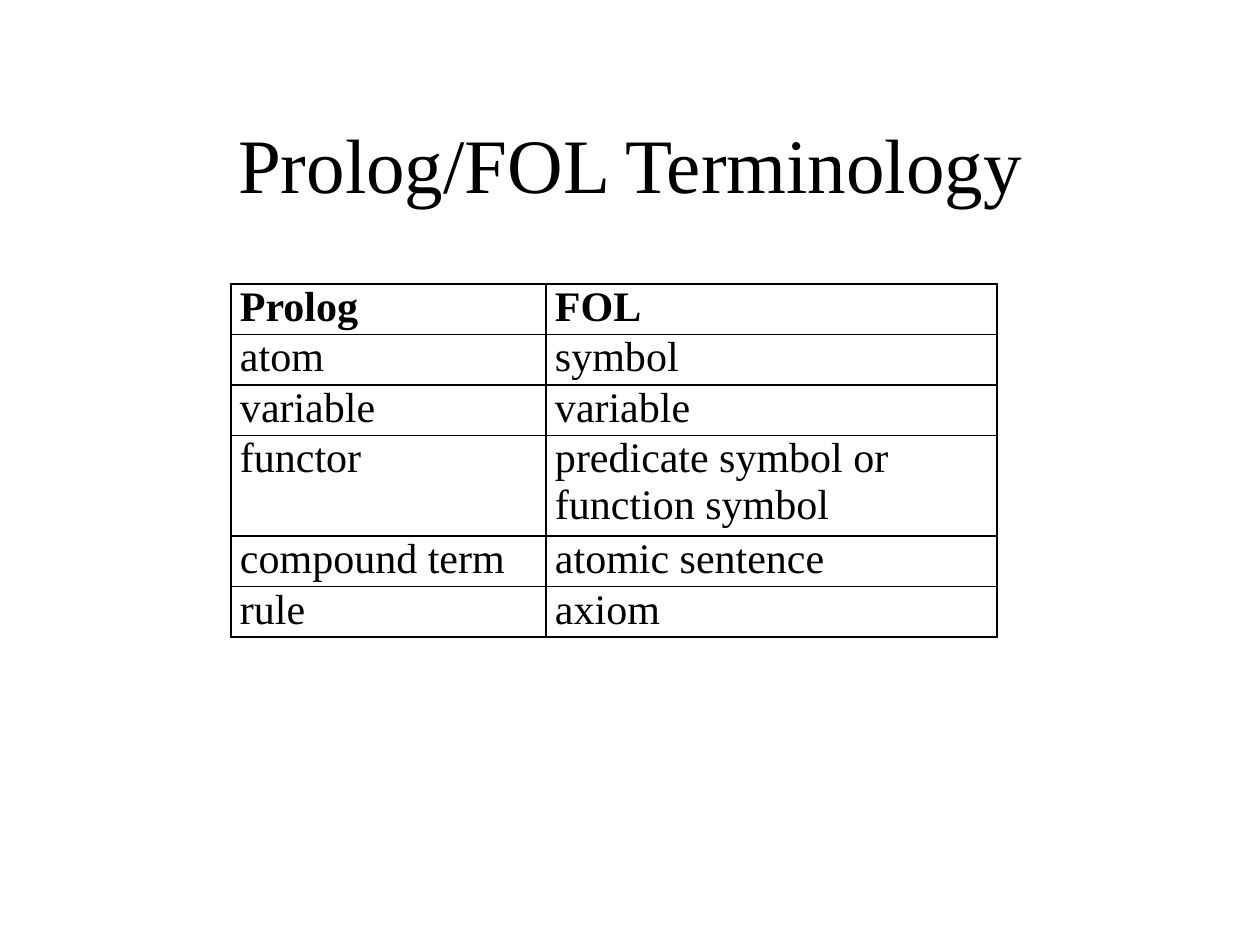
from dataclasses import dataclass

from lxml import etree
from pptx import Presentation
from pptx.dml.color import RGBColor
from pptx.enum.text import MSO_ANCHOR, PP_ALIGN
from pptx.oxml.ns import qn
from pptx.util import Emu, Pt

MIDDLE = MSO_ANCHOR.MIDDLE
CENTER = PP_ALIGN.CENTER
EMU_PER_PX = 914400 / 126


@dataclass(frozen=True)
class Theme:
    font: str = "Times New Roman"
    ink: str = "000000"
    title_size: int = 44
    cell_size: int = 24
    border_width: int = 1


THEME = Theme()
TITLE = "Prolog/FOL Terminology"
TERMS = [
    ("Prolog", "FOL"),
    ("atom", "symbol"),
    ("variable", "variable"),
    ("functor", "predicate symbol or function symbol"),
    ("compound term", "atomic sentence"),
    ("rule", "axiom"),
]
COLUMN_WIDTHS = (315, 451)
ROW_HEIGHTS = (46, 46, 46, 93, 46, 46)
CELL_INSET = 9


def px(length):
    return Emu(round(length * EMU_PER_PX))


def format_text(text_frame, size, bold=False):
    for paragraph in text_frame.paragraphs:
        for run in paragraph.runs:
            run.font.name = THEME.font
            run.font.size = Pt(size)
            run.font.bold = bold
            run.font.color.rgb = RGBColor.from_string(THEME.ink)


def add_title(slide, left, top, width, height):
    shape = slide.shapes.add_textbox(px(left), px(top), px(width), px(height))
    text_frame = shape.text_frame
    text_frame.word_wrap = True
    text_frame.vertical_anchor = MIDDLE
    text_frame.text = TITLE
    text_frame.paragraphs[0].alignment = CENTER
    format_text(text_frame, THEME.title_size)


def add_borders(cell):
    properties = cell._tc.get_or_add_tcPr()
    for position, side in enumerate(("a:lnL", "a:lnR", "a:lnT", "a:lnB")):
        line = etree.Element(qn(side), w=str(Pt(THEME.border_width)))
        fill = etree.SubElement(line, qn("a:solidFill"))
        etree.SubElement(fill, qn("a:srgbClr"), val=THEME.ink)
        properties.insert(position, line)


def format_cell(cell, text, bold):
    cell.fill.background()
    cell.margin_left = cell.margin_right = px(CELL_INSET)
    cell.margin_top = cell.margin_bottom = 0
    cell.text_frame.text = text
    format_text(cell.text_frame, THEME.cell_size, bold)
    add_borders(cell)


def add_terms_table(slide, left, top):
    shape = slide.shapes.add_table(
        len(TERMS), len(COLUMN_WIDTHS), px(left), px(top),
        px(sum(COLUMN_WIDTHS)), px(sum(ROW_HEIGHTS)),
    )
    table = shape.table
    table.horz_banding = False
    table.first_row = False
    for column, width in zip(table.columns, COLUMN_WIDTHS):
        column.width = px(width)
    for row_index, (row, height) in enumerate(zip(table.rows, ROW_HEIGHTS)):
        row.height = px(height)
        for cell, text in zip(row.cells, TERMS[row_index]):
            format_cell(cell, text, bold=row_index == 0)


def main():
    presentation = Presentation()
    presentation.slide_width = px(1260)
    presentation.slide_height = px(945)
    slide = presentation.slides.add_slide(presentation.slide_layouts[6])
    add_title(slide, 95, 84, 1071, 158)
    add_terms_table(slide, 231, 284)
    presentation.save("out.pptx")


if __name__ == "__main__":
    main()
